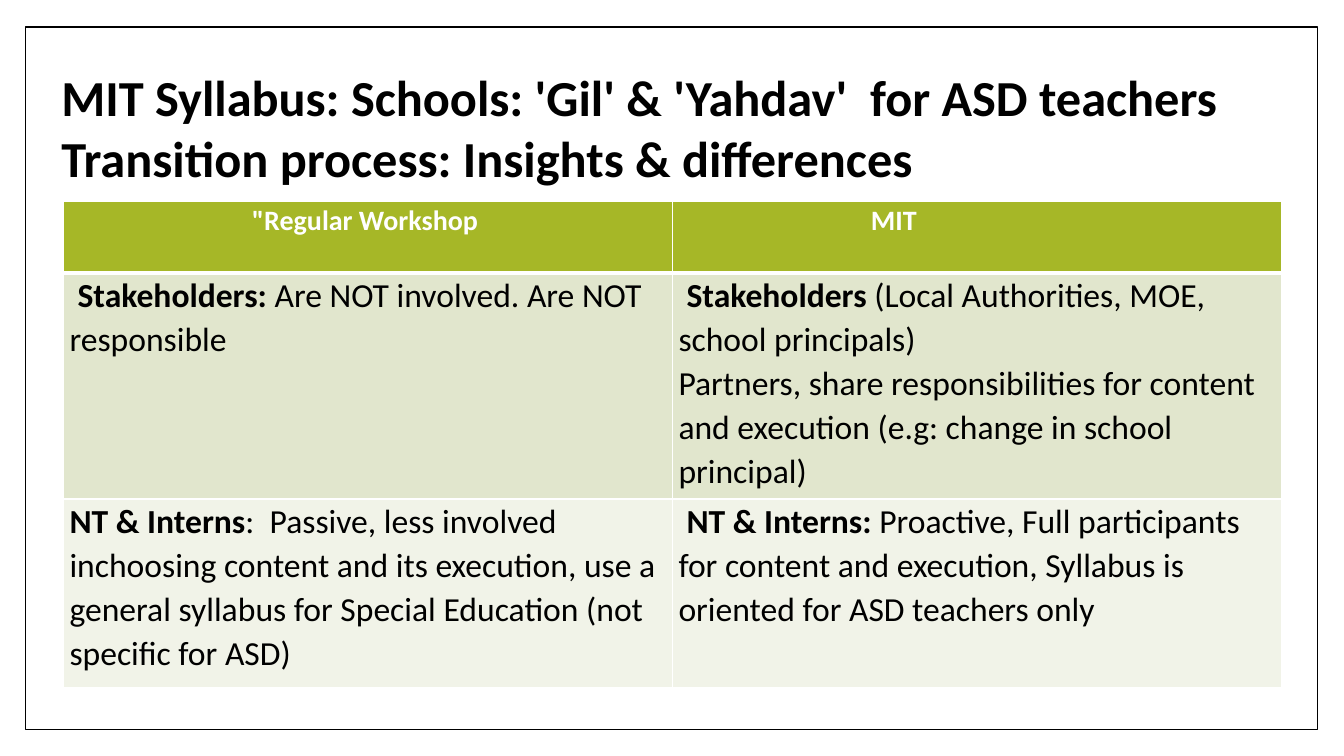
from lxml.etree import SubElement
from pptx import Presentation
from pptx.dml.color import RGBColor
from pptx.enum.shapes import MSO_SHAPE
from pptx.enum.text import MSO_ANCHOR, PP_ALIGN
from pptx.oxml.ns import qn
from pptx.util import Pt

PX = 9144  # EMU per px, 100 px to the inch
FONT = "Calibri"
BLACK = RGBColor(0x00, 0x00, 0x00)
WHITE = RGBColor(0xFF, 0xFF, 0xFF)
GREEN = RGBColor(0xA6, 0xB7, 0x27)
SAGE = RGBColor(0xE1, 0xE6, 0xCD)
PALE = RGBColor(0xF1, 0xF3, 0xE8)

TITLE = ["MIT Syllabus: Schools: 'Gil' & 'Yahdav'  for ASD teachers",
         "Transition process: Insights & differences"]
HEADERS = [("Regular Workshop", 6), ("MIT", 171)]  # text, right inset
HEADERS[0] = ('"' + HEADERS[0][0], 12)
# Each cell is a list of paragraphs: first-line indent, bold lead, plain text
BODY = [
    [[(8, "Stakeholders: ", "Are NOT involved. Are NOT responsible")],
     [(8, "Stakeholders ", "(Local Authorities, MOE, school principals)"),
      (0, "", "Partners, share responsibilities for content and execution "
              "(e.g: change in school principal)")]],
    [[(0, "NT & Interns", ":  Passive, less involved inchoosing content and its "
                          "execution, use a general syllabus for Special "
                          "Education (not specific for ASD)")],
     [(8, "NT & Interns: ", "Proactive, Full participants for content and "
                            "execution, Syllabus is oriented for ASD teachers only")]],
]


def add_text(p, text, size=24, color=BLACK, bold=False):
    r = p.add_run()
    r.text = text
    r.font.name, r.font.size, r.font.bold = FONT, Pt(size), bold
    r.font.color.rgb = color


def set_borders(cell, **widths):
    """Draw white borders; widths are points keyed by L, R, T and B."""
    tcPr = cell._tc.get_or_add_tcPr()
    for side in "LRTB":
        ln = SubElement(tcPr, qn(f"a:ln{side}"), w=str(Pt(widths.get(side, 1))))
        fill = SubElement(ln, qn("a:solidFill"))
        SubElement(fill, qn("a:srgbClr"), val=str(WHITE))


class SlideBuilder:
    def __init__(self, slide):
        self.shapes = slide.shapes

    def frame(self, *box):
        sp = self.shapes.add_shape(MSO_SHAPE.RECTANGLE, *(v * PX for v in box))
        sp.shadow.inherit = False
        sp.fill.solid()
        sp.fill.fore_color.rgb = WHITE
        sp.line.color.rgb = BLACK
        sp.line.width = Pt(1)

    def title(self, lines, *box):
        tf = self.shapes.add_textbox(*(v * PX for v in box)).text_frame
        tf.word_wrap = True
        tf.vertical_anchor = MSO_ANCHOR.MIDDLE
        p = tf.paragraphs[0]
        for i, line in enumerate(lines):
            if i:
                p.add_line_break()
            add_text(p, line, size=36, bold=True)

    def table(self, row_heights, *box):
        tbl = self.shapes.add_table(len(row_heights), 2, *(v * PX for v in box)).table
        tbl.first_row = tbl.horz_banding = False
        for row, height in zip(tbl.rows, row_heights):
            row.height = height * PX
        return tbl

    def cell(self, cell, fill, right=6, **borders):
        set_borders(cell, **borders)
        cell.fill.solid()
        cell.fill.fore_color.rgb = fill
        cell.margin_left, cell.margin_right = 6 * PX, right * PX
        cell.margin_top = cell.margin_bottom = 0
        return cell.text_frame

    def header(self, cell, text, right):
        p = self.cell(cell, GREEN, right, B=3).paragraphs[0]
        p.alignment = PP_ALIGN.CENTER
        p.line_spacing = 1.07
        add_text(p, text, size=20, color=WHITE, bold=True)

    def body(self, cell, paragraphs, fill, **borders):
        tf = self.cell(cell, fill, **borders)
        for i, (indent, lead, text) in enumerate(paragraphs):
            p = tf.add_paragraph() if i else tf.paragraphs[0]
            p.line_spacing = 1.07
            p._p.get_or_add_pPr().set("indent", str(indent * PX))
            if lead:
                add_text(p, lead, bold=True)
            add_text(p, text)


def main():
    prs = Presentation()
    prs.slide_width, prs.slide_height = 1333 * PX, 750 * PX
    s = SlideBuilder(prs.slides.add_slide(prs.slide_layouts[6]))
    s.frame(25, 27, 1282, 697)
    tbl = s.table([71, 224, 187], 63, 200, 1208, 482)
    for col, (text, right) in enumerate(HEADERS):
        s.header(tbl.cell(0, col), text, right)
    for row, (cells, fill, top) in enumerate(zip(BODY, (SAGE, PALE), (3, 1)), 1):
        for col, paragraphs in enumerate(cells):
            s.body(tbl.cell(row, col), paragraphs, fill, T=top)
    s.title(TITLE, 51, 52, 1228, 148)
    prs.save("out.pptx")


if __name__ == "__main__":
    main()
